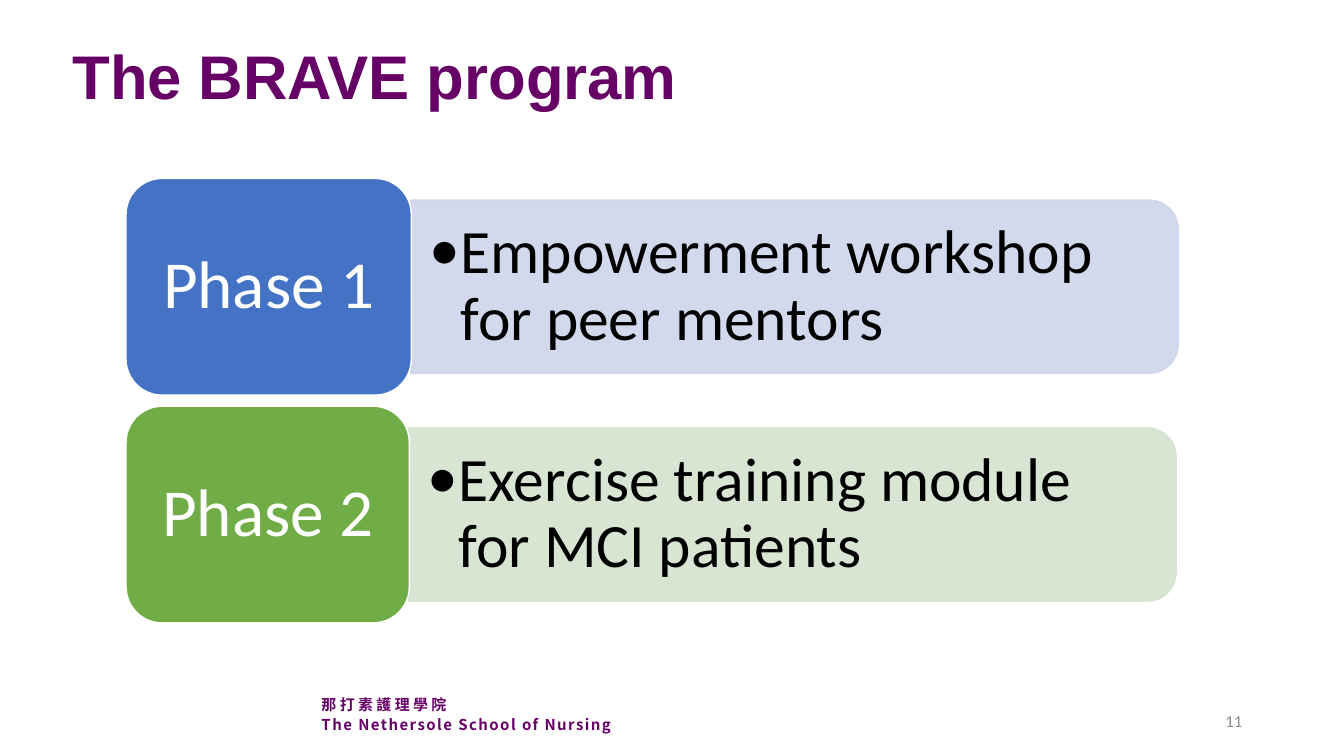
from dataclasses import dataclass

from lxml.etree import SubElement
from pptx import Presentation
from pptx.dml.color import RGBColor as Color
from pptx.enum.shapes import MSO_SHAPE as Shape
from pptx.enum.text import MSO_ANCHOR as Anchor, PP_ALIGN as Align
from pptx.oxml.ns import qn
from pptx.util import Emu, Pt


@dataclass(frozen=True)
class Theme:
    """Colours, fonts and type sizes of the slide."""
    plum: str = "660066"
    gray: str = "8C8C8C"
    ink: str = "000000"
    white: str = "FFFFFF"
    blue: str = "4472C4"
    pale_blue: str = "CFD5EA"
    green: str = "70AD47"
    pale_green: str = "D5E3CF"
    body: str = "Calibri"
    head: str = "Arial"
    school: str = "Noto Sans CJK SC"
    label: float = 48
    big: float = 44
    page: float = 12
    small: float = 10.7


THEME = Theme()
SCALE = 9144


def px(num):
    """Turn px, at 100 to the inch, into EMU."""
    return Emu(num * SCALE)


def style(para, font, size, color, bold=False):
    """Format the runs of a paragraph."""
    for run in para.runs:
        run.font.name = font
        run.font.size = Pt(size)
        run.font.bold = bold
        run.font.color.rgb = Color.from_string(color)
        SubElement(run.font._element, qn("a:ea"), typeface=font)


def pad(frame, side, edge):
    """Set the insets of a text frame."""
    frame.margin_left = frame.margin_right = px(side)
    frame.margin_top = frame.margin_bottom = px(edge)


def add_box(slide, text, box, anchor=Anchor.MIDDLE):
    """Add a wrapped text box and return its frame."""
    frame = slide.shapes.add_textbox(*map(px, box)).text_frame
    frame.word_wrap = True
    frame.vertical_anchor = anchor
    frame.text = text
    return frame


def add_form(slide, kind, box, fill, line):
    """Add a flat filled shape with a thin line."""
    form = slide.shapes.add_shape(kind, *map(px, box))
    form.shadow.inherit = False
    form.fill.solid()
    form.fill.fore_color.rgb = Color.from_string(fill)
    form.line.color.rgb = Color.from_string(line)
    form.line.width = Pt(1)
    return form


def add_panel(slide, text, left, top, tint):
    """Add a tinted panel, turned on its side, with a bulleted text."""
    wide, high = 172, 761
    box = (left + (high - wide) // 2, top + 107 - high // 2, wide, high)
    panel = add_form(slide, Shape.ROUND_2_SAME_RECTANGLE, box, tint, tint)
    panel.rotation = 90
    for color in panel._element.spPr.iter(qn("a:srgbClr")):
        SubElement(color, qn("a:alpha"), val="90000")
    frame = add_box(slide, text, (left, top + 30, 753, 155))
    pad(frame, 18, 9)
    para = frame.paragraphs[0]
    props = para._p.get_or_add_pPr()
    props.set("marL", str(px(31)))
    props.set("indent", str(px(-31)))
    SubElement(props, qn("a:buFont"), typeface=THEME.body)
    SubElement(props, qn("a:buChar"), char="•")
    para.line_spacing = 0.9
    style(para, THEME.body, THEME.big, THEME.ink)


def add_card(slide, text, box, fill):
    """Add a rounded card with a centred label."""
    card = add_form(slide, Shape.ROUNDED_RECTANGLE, box, fill, THEME.white)
    frame = card.text_frame
    frame.word_wrap = True
    frame.vertical_anchor = Anchor.MIDDLE
    pad(frame, 20, 10)
    frame.text = text
    para = frame.paragraphs[0]
    para.alignment = Align.CENTER
    para.line_spacing = 0.9
    style(para, THEME.body, THEME.label, THEME.white)


def add_title(slide, text):
    """Add the slide title."""
    para = add_box(slide, text, (62, 11, 1198, 135)).paragraphs[0]
    para.line_spacing = 0.9
    style(para, THEME.head, THEME.big, THEME.plum, True)


def add_foot(slide, lines, page):
    """Add the school name and the page number."""
    frame = add_box(slide, "\n".join(lines), (309, 682, 392, 52), Anchor.TOP)
    for para in frame.paragraphs:
        para.line_spacing = Pt(14.7)
        style(para, THEME.school, THEME.small, THEME.plum, True)
    frame.paragraphs[1].runs[0].font._element.set("spc", "105")
    para = add_box(slide, page, (942, 695, 300, 40)).paragraphs[0]
    para.alignment = Align.RIGHT
    style(para, THEME.body, THEME.page, THEME.gray)


def main():
    """Build the slide and save it."""
    deck = Presentation()
    deck.slide_width, deck.slide_height = px(1333), px(750)
    slide = deck.slides.add_slide(deck.slide_layouts[6])
    add_title(slide, "The BRAVE program")
    phases = (
        ("Phase 1", "Empowerment workshop for peer mentors",
         283, THEME.blue, THEME.pale_blue),
        ("Phase 2", "Exercise training module for MCI patients",
         281, THEME.green, THEME.pale_green),
    )
    left, first, step = 125, 177, 226
    for row, (label, text, wide, fill, tint) in enumerate(phases):
        top = first + row * step
        add_panel(slide, text, left + wide, top, tint)
        add_card(slide, label, (left, top, wide, 215), fill)
    school = ("那 打 素 護 理 學 院", "The Nethersole School of Nursing")
    add_foot(slide, school, "11")
    deck.save("out.pptx")


if __name__ == "__main__":
    main()
